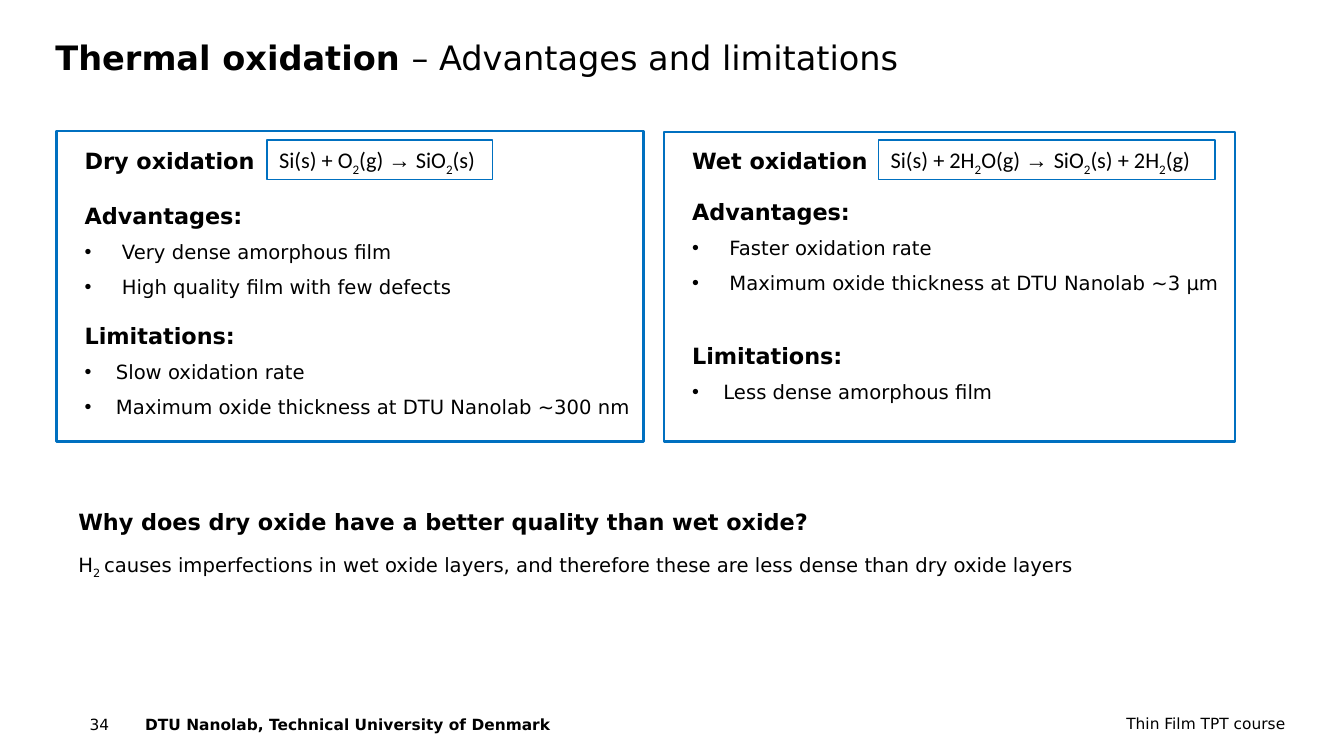
import pptx
import pptx.util
import pptx.dml.color
import pptx.enum.shapes
import pptx.enum.text
import pptx.oxml.ns
import lxml.etree

Inches = pptx.util.Inches
Pt = pptx.util.Pt
Align = pptx.enum.text.PP_ALIGN
BLACK = pptx.dml.color.RGBColor(0, 0, 0)
BLUE = pptx.dml.color.RGBColor(0x00, 0x70, 0xC0)

BASE = {"name": "DejaVu Sans", "color": BLACK, "bold": False}
HEADING = {"size": Pt(16), "bold": True}
BODY = {"size": Pt(14)}
TITLE = {"size": Pt(24)}
FOOTER = {"size": Pt(11)}
FORMULA = {"name": "Calibri", "size": Pt(16)}
ARROW = {**FORMULA, "name": "Arial"}
SUB = {"subscript": True}
PANEL_INSETS = (0.12, 0.06)

TITLE_RUNS = [
    ("Thermal oxidation ", {**TITLE, "bold": True}),
    ("– Advantages and limitations", TITLE),
]

PANELS = [
    {
        "heading": "Dry oxidation",
        "frame": (0.56, 1.3, 5.83, 3.08),
        "text_at": (0.72, 1.4, 5.79, 2.95),
        "formula_at": (2.65, 1.39, 2.24, 0.39),
        "formula": [
            ("Si(s) + O", FORMULA), ("2", {**FORMULA, **SUB}), ("(g) ", FORMULA),
            ("→", ARROW), (" SiO", FORMULA), ("2", {**FORMULA, **SUB}), ("(s)", FORMULA),
        ],
        "sections": [
            ("Advantages:", 20, 0.37, ["Very dense amorphous film", "High quality film with few defects"]),
            ("Limitations:", 17, 0.31, ["Slow oxidation rate", "Maximum oxide thickness at DTU Nanolab ~300 nm"]),
        ],
    },
    {
        "heading": "Wet oxidation",
        "frame": (6.59, 1.31, 5.67, 3.07),
        "text_at": (6.75, 1.4, 5.51, 2.95),
        "formula_at": (8.72, 1.39, 3.34, 0.39),
        "formula": [
            ("Si(s) + 2H", FORMULA), ("2", {**FORMULA, **SUB}), ("O(g) ", FORMULA),
            ("→ ", ARROW), ("SiO", FORMULA), ("2", {**FORMULA, **SUB}),
            ("(s) + 2H", FORMULA), ("2", {**FORMULA, **SUB}), ("(g)", FORMULA),
        ],
        "sections": [
            ("Advantages:", 17, 0.37, ["Faster oxidation rate", "Maximum oxide thickness at DTU Nanolab ~3 µm"]),
            ("Limitations:", 34, 0.31, ["Less dense amorphous film"]),
        ],
    },
]
BULLET_GAP = 8

QUESTION = "Why does dry oxide have a better quality than wet oxide?"
ANSWER = [
    ("H", BODY),
    ("2 ", {**BODY, **SUB}),
    ("causes imperfections in wet oxide layers, and therefore these are less dense than dry oxide layers", BODY),
]

FOOTERS = [
    ("34", (0.89, 7.09, 0.44, 0.33), FOOTER, Align.LEFT),
    ("DTU Nanolab, Technical University of Denmark", (1.44, 7.09, 5.39, 0.33), {**FOOTER, "bold": True}, Align.LEFT),
    ("Thin Film TPT course", (10.24, 7.08, 2.52, 0.33), FOOTER, Align.RIGHT),
]


def paragraph(runs, gap=0, indent=0, align=Align.LEFT):
    return {"runs": runs, "gap": gap, "indent": indent, "align": align}


def add_bullet(line, indent):
    properties = line._p.get_or_add_pPr()
    properties.set("marL", str(Inches(indent)))
    properties.set("indent", str(-Inches(indent)))
    for tag, key, value in (("a:buFont", "typeface", "Arial"), ("a:buChar", "char", "•")):
        lxml.etree.SubElement(properties, pptx.oxml.ns.qn(tag)).set(key, value)


def write(frame, paragraphs, insets=(0, 0)):
    side, end = map(Inches, insets)
    settings = {
        "word_wrap": True,
        "auto_size": pptx.enum.text.MSO_AUTO_SIZE.NONE,
        "vertical_anchor": pptx.enum.text.MSO_ANCHOR.TOP,
        "margin_left": side, "margin_right": side,
        "margin_top": end, "margin_bottom": end,
    }
    for key, value in settings.items():
        setattr(frame, key, value)
    for index, content in enumerate(paragraphs):
        line = frame.add_paragraph() if index else frame.paragraphs[0]
        if content["indent"]:
            add_bullet(line, content["indent"])
        line.alignment = content["align"]
        if content["gap"]:
            line.space_before = Pt(content["gap"])
        for text, look in content["runs"]:
            run = line.add_run()
            run.text = text
            for key, value in {**BASE, **look}.items():
                if key == "color":
                    run.font.color.rgb = value
                elif key == "subscript":
                    run._r.get_or_add_rPr().set("baseline", "-25000")
                else:
                    setattr(run.font, key, value)


def add_text(slide, at, paragraphs, insets=(0, 0)):
    write(slide.shapes.add_textbox(*map(Inches, at)).text_frame, paragraphs, insets)


def add_outline(slide, at, width):
    outline = slide.shapes.add_shape(pptx.enum.shapes.MSO_SHAPE.RECTANGLE, *map(Inches, at))
    outline.shadow.inherit = False
    outline.fill.background()
    outline.line.color.rgb = BLUE
    outline.line.width = Pt(width)
    return outline


def add_panel(slide, panel):
    lines = [paragraph([(panel["heading"], HEADING)])]
    for heading, gap, indent, points in panel["sections"]:
        lines.append(paragraph([(heading, HEADING)], gap))
        lines += [paragraph([(point, BODY)], BULLET_GAP, indent) for point in points]
    add_outline(slide, panel["frame"], 1.75)
    add_text(slide, panel["text_at"], lines, PANEL_INSETS)
    formula = add_outline(slide, panel["formula_at"], 1.25)
    write(formula.text_frame, [paragraph(panel["formula"])], PANEL_INSETS)


def main():
    deck = pptx.Presentation()
    deck.slide_width, deck.slide_height = Inches(13.34), Inches(7.5)
    slide = deck.slides.add_slide(deck.slide_layouts[5])
    title = slide.shapes.title
    for key, value in zip(("left", "top", "width", "height"), (0.55, 0.37, 11.47, 0.5)):
        setattr(title, key, Inches(value))
    write(title.text_frame, [paragraph(TITLE_RUNS)])
    for panel in PANELS:
        add_panel(slide, panel)
    conclusion = [paragraph([(QUESTION, HEADING)]), paragraph(ANSWER, 13)]
    add_text(slide, (0.68, 4.99, 11.3, 0.75), conclusion, (0.1, 0.05))
    for text, at, look, align in FOOTERS:
        add_text(slide, at, [paragraph([(text, look)], align=align)])
    deck.save("out.pptx")


if __name__ == "__main__":
    main()
